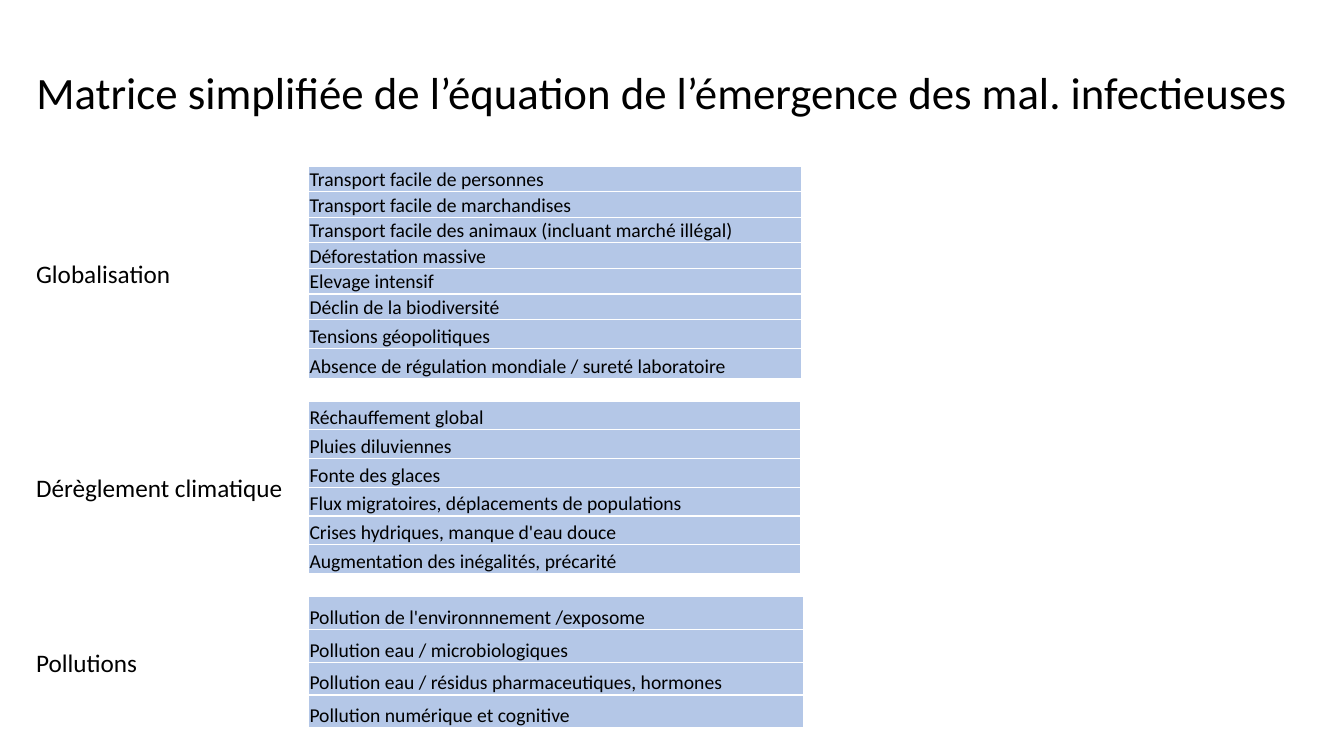
import pptx
import pptx.util
import pptx.dml.color
import pptx.enum.text
import pptx.oxml
import pptx.oxml.ns

Inches = pptx.util.Inches
Pt = pptx.util.Pt
ANCHOR = pptx.enum.text.MSO_ANCHOR

COLORS = {"text": "000000", "cell": "B4C7E7", "edge": "FFFFFF"}
FONT = "Calibri"
LEFT = 0.26
TABLE_LEFT = 3.06

TITLE = "Matrice simplifiée de l’équation de l’émergence des mal. infectieuses"

# label, label top, label width, table top, table width, table height,
# heights of the last rows (the others share the rest), factors
GROUPS = [
    ("Globalisation", 2.51, 1.76, 1.65, 4.89, 2.11, [0.29, 0.3], [
        "Transport facile de personnes",
        "Transport facile de marchandises",
        "Transport facile des animaux (incluant marché illégal)",
        "Déforestation massive",
        "Elevage intensif",
        "Déclin de la biodiversité",
        "Tensions géopolitiques",
        "Absence de régulation mondiale / sureté laboratoire",
    ]),
    ("Dérèglement climatique", 4.64, 2.73, 3.98, 4.88, 1.71, [], [
        "Réchauffement global",
        "Pluies diluviennes",
        "Fonte des glaces",
        "Flux migratoires, déplacements de populations",
        "Crises hydriques, manque d'eau douce",
        "Augmentation des inégalités, précarité",
    ]),
    ("Pollutions", 6.37, 1.76, 5.92, 4.91, 1.3, [], [
        "Pollution de l'environnnement /exposome",
        "Pollution eau / microbiologiques",
        "Pollution eau / résidus pharmaceutiques, hormones",
        "Pollution numérique et cognitive",
    ]),
]


class Page:
    """Holds the style and the current slide."""

    def __init__(self, slide):
        self.slide = slide

    def color(self, name):
        return pptx.dml.color.RGBColor.from_string(COLORS[name])

    def line(self, frame, text, size):
        para = frame.paragraphs[0]
        para.alignment = pptx.enum.text.PP_ALIGN.LEFT
        run = para.add_run()
        run.text = text
        run.font.name = FONT
        run.font.size = Pt(size)
        run.font.bold = False
        run.font.color.rgb = self.color("text")

    def title(self, text, left, top, width, height):
        shape = self.slide.shapes.title
        shape.left, shape.top = Inches(left), Inches(top)
        shape.width, shape.height = Inches(width), Inches(height)
        frame = shape.text_frame
        frame.auto_size = pptx.enum.text.MSO_AUTO_SIZE.NONE
        frame.vertical_anchor = ANCHOR.TOP
        self.line(frame, text, 32)

    def label(self, text, left, top, width, height):
        box = self.slide.shapes.add_textbox(
            Inches(left), Inches(top), Inches(width), Inches(height))
        frame = box.text_frame
        frame.word_wrap = True
        frame.auto_size = pptx.enum.text.MSO_AUTO_SIZE.SHAPE_TO_FIT_TEXT
        self.line(frame, text, 18)

    def border(self, cell):
        props = cell._tc.get_or_add_tcPr()
        for side in ("lnL", "lnR", "lnT", "lnB"):
            props.append(pptx.oxml.parse_xml(
                f'<a:{side} {pptx.oxml.ns.nsdecls("a")} w="{Pt(1)}"><a:solidFill>'
                f'<a:srgbClr val="{COLORS["edge"]}"/></a:solidFill></a:{side}>'))

    def table(self, items, left, top, width, height, tail):
        table = self.slide.shapes.add_table(
            len(items), 1, Inches(left), Inches(top),
            Inches(width), Inches(height)).table
        table.first_row = table.horz_banding = False
        even = len(items) - len(tail)
        share = (height - sum(tail)) / even
        for row, item, tall in zip(table.rows, items, [share] * even + tail):
            row.height = Inches(tall)
            cell = row.cells[0]
            cell.margin_left = cell.margin_right = cell.margin_top = Inches(0.01)
            cell.margin_bottom = 0
            cell.vertical_anchor = ANCHOR.BOTTOM
            self.border(cell)
            cell.fill.solid()
            cell.fill.fore_color.rgb = self.color("cell")
            self.line(cell.text_frame, item, 14)


def main():
    deck = pptx.Presentation()
    deck.slide_width, deck.slide_height = Inches(13.33), Inches(7.5)
    page = Page(deck.slides.add_slide(deck.slide_layouts.get_by_name("Title Only")))

    # Title
    page.title(TITLE, LEFT, 0.59, 12.81, 0.64)

    # One label and one table of factors per group
    for name, mid, span, top, width, height, tail, items in GROUPS:
        page.table(items, TABLE_LEFT, top, width, height, tail)
        page.label(name, LEFT, mid, span, 0.4)

    deck.save("out.pptx")


if __name__ == "__main__":
    main()
